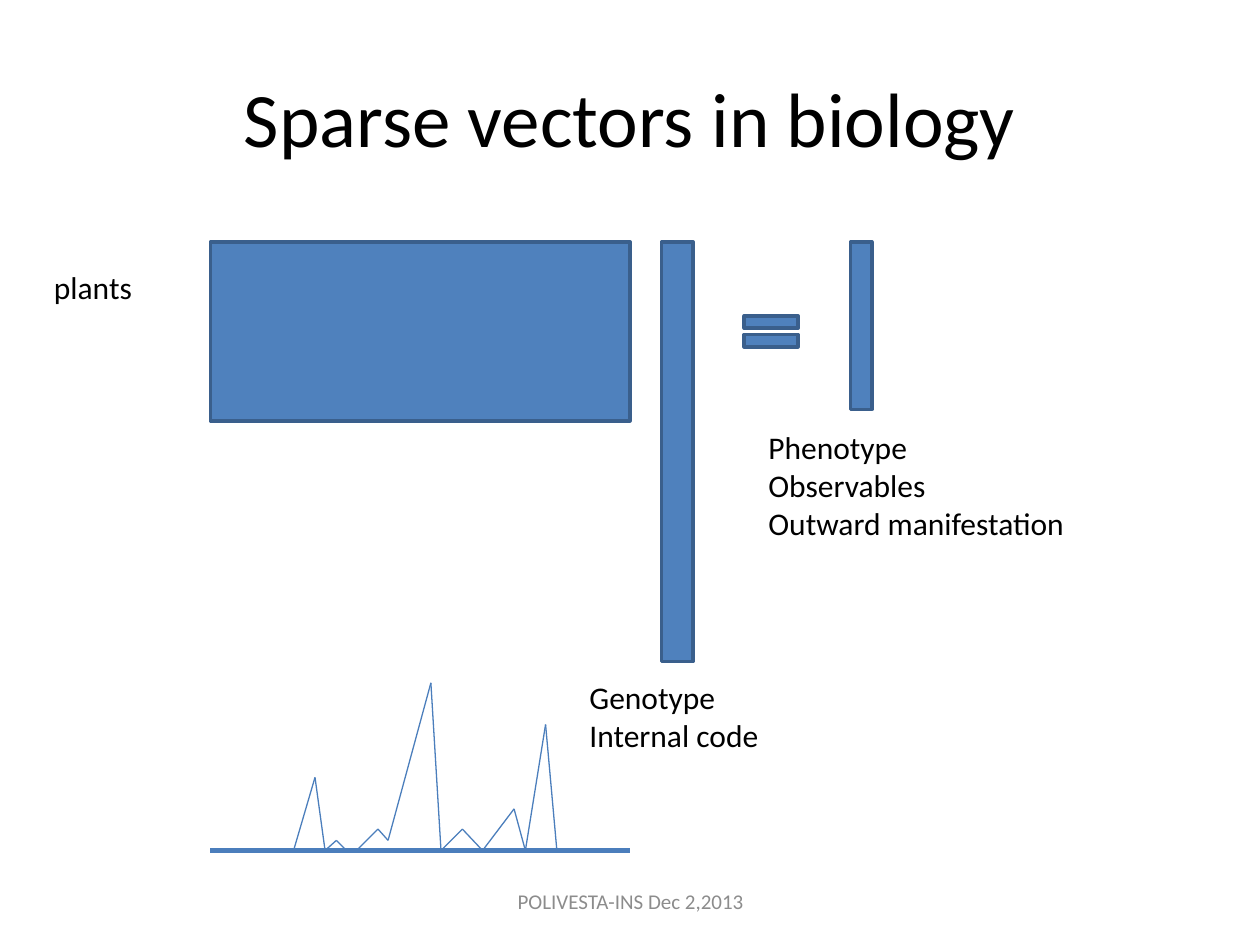
from itertools import pairwise

from lxml import etree
from pptx import Presentation
from pptx import util as u
from pptx.dml.color import RGBColor
from pptx.enum import shapes, text
from pptx.oxml.ns import qn

FONT = "Calibri"
BLACK, GREY = "000000", "8C8C8C"
FILL, OUTLINE, TRACE = "4F81BD", "3A5F8C", "4B7EBC"
BASE = 6.75  # height of the spectrum's baseline
TOP = 1.92  # shared top of the matrix and both vectors


def color(value):
    return RGBColor.from_string(value)


class SlideBuilder:
    def __init__(self, slide):
        self.slide = slide

    def set_text(self, frame, lines, size, ink=BLACK, align=text.PP_ALIGN.LEFT,
                 anchor=text.MSO_ANCHOR.TOP):
        """Fill a text frame, one paragraph per line."""
        frame.text = "\n".join(lines)
        for name, value in {"word_wrap": True, "vertical_anchor": anchor,
                            "auto_size": text.MSO_AUTO_SIZE.NONE}.items():
            setattr(frame, name, value)
        for paragraph in frame.paragraphs:
            paragraph.alignment = align
            font = paragraph.runs[0].font
            for name, value in {"name": FONT, "size": u.Pt(size)}.items():
                setattr(font, name, value)
            font.color.rgb = color(ink)

    def title(self, words, box):
        heading = self.slide.shapes.title
        for name, value in zip(("left", "top", "width", "height"), box):
            setattr(heading, name, u.Inches(value))
        self.set_text(heading.text_frame, [words], 44,
                      align=text.PP_ALIGN.CENTER, anchor=text.MSO_ANCHOR.MIDDLE)

    def label(self, lines, box, size=18, **style):
        label = self.slide.shapes.add_textbox(*map(u.Inches, box))
        self.set_text(label.text_frame, lines, size, **style)

    def block(self, box, kind=shapes.MSO_SHAPE.RECTANGLE):
        block = self.slide.shapes.add_shape(kind, *map(u.Inches, box))
        block.shadow.inherit = False
        block.fill.solid()
        block.fill.fore_color.rgb = color(FILL)
        block.line.color.rgb = color(OUTLINE)
        block.line.width = u.Pt(2)

    def line(self, start, end, width=0.75):
        line = self.slide.shapes.add_connector(
            shapes.MSO_CONNECTOR.STRAIGHT, *map(u.Inches, (*start, *end)))
        line.line.color.rgb = color(TRACE)
        line.line.width = u.Pt(width)
        etree.SubElement(line._element.spPr, qn("a:effectLst"))

    def trace(self, points):
        for start, end in pairwise(points):
            self.line(start, end)


def main():
    deck = Presentation()
    deck.slide_width, deck.slide_height = u.Inches(10), u.Inches(7.5)
    page = SlideBuilder(deck.slides.add_slide(deck.slide_layouts[5]))

    page.title("Sparse vectors in biology", (0.5, 0.3, 9, 1.25))

    # Matrix times genotype vector equals phenotype vector
    page.block((1.67, TOP, 3.33, 1.42))
    page.block((5.25, TOP, 0.25, 3.33))
    page.block((5.83, 2.42, 0.58, 0.42), shapes.MSO_SHAPE.MATH_EQUAL)
    page.block((6.75, TOP, 0.17, 1.33))

    # Sparse spectrum: a baseline with two runs of peaks
    page.line((1.67, BASE), (5, BASE), width=3)
    page.trace([(2.33, BASE), (2.5, 6.17), (2.58, BASE), (2.67, 6.67), (2.75, BASE)])
    page.trace([(2.83, BASE), (3, 6.58), (3.08, 6.67), (3.42, 5.42), (3.5, BASE),
                (3.67, 6.58), (3.83, BASE), (4.08, 6.42), (4.17, BASE),
                (4.33, 5.75), (4.42, BASE)])

    page.label(["plants"], (0.33, 2.08, 1, 0.4))
    page.label(["Genotype", "Internal code"], (4.58, 5.33, 1.83, 0.71))
    page.label(["Phenotype", "Observables", "Outward manifestation"],
               (6, 3.35, 3.25, 1.01))
    page.label(["POLIVESTA-INS Dec 2,2013"], (3.42, 6.95, 3.17, 0.4), size=12,
               ink=GREY, align=text.PP_ALIGN.CENTER, anchor=text.MSO_ANCHOR.MIDDLE)

    deck.save("out.pptx")


if __name__ == "__main__":
    main()
